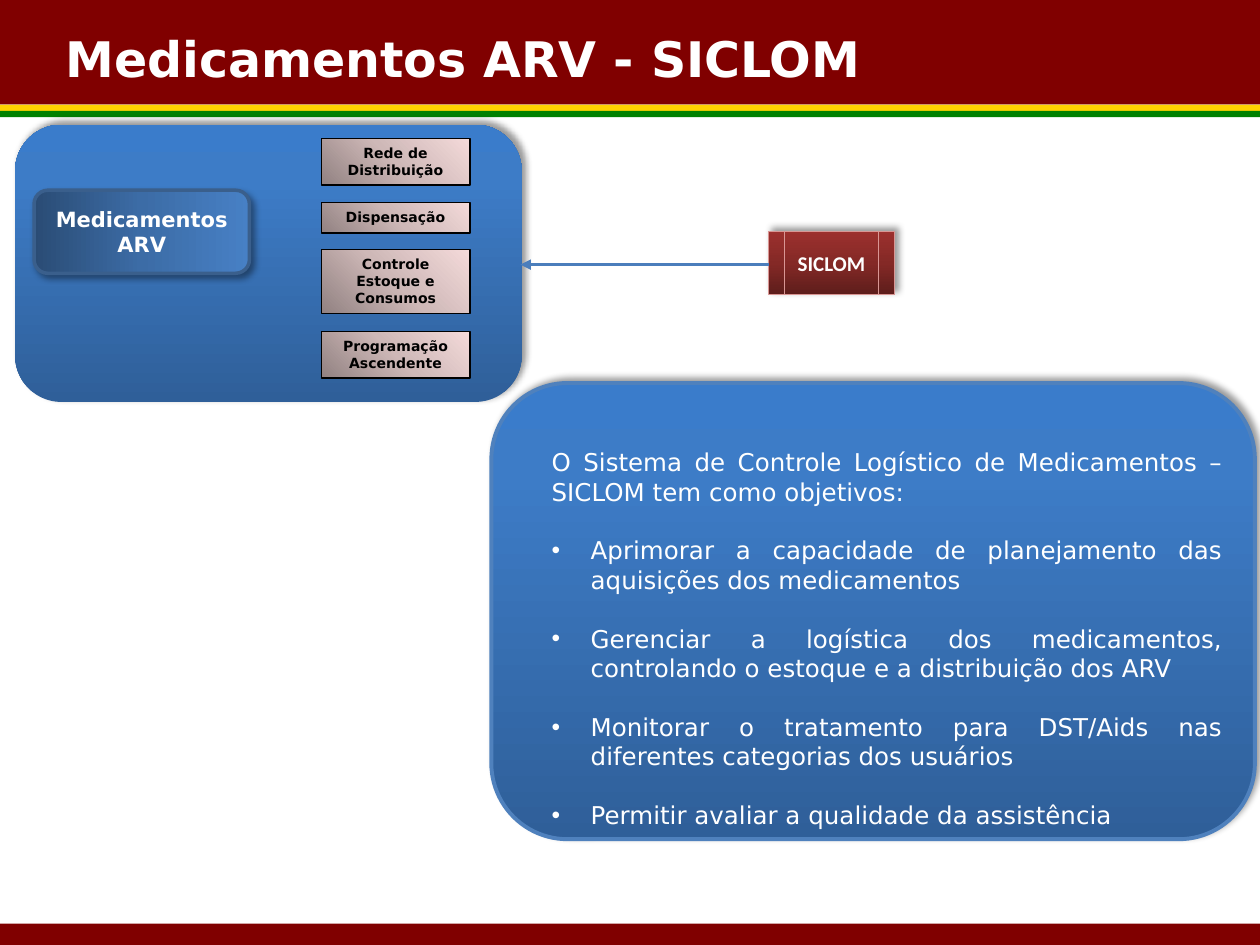
"""Build the slide on antiretroviral medicines and the SICLOM system."""
import pptx
import pptx.dml.color
import pptx.enum.shapes
import pptx.enum.text
import pptx.oxml
import pptx.oxml.ns
import pptx.util
from pptx.util import Inches

SHAPE = pptx.enum.shapes.MSO_SHAPE
ALIGN = pptx.enum.text.PP_ALIGN
ANCHOR = pptx.enum.text.MSO_ANCHOR
FIT = pptx.enum.text.MSO_AUTO_SIZE
qn = pptx.oxml.ns.qn

THEME = {
    "font": "DejaVu Sans", "process_font": "Calibri",
    "white": "FFFFFF", "black": "000000",
    "maroon": "800000", "yellow": "FFD200", "green": "008000",
    "panel_edge": "4F81BD", "topic_edge": "3A5F8C",
    "process_edge": "D99694", "arrow": "4B7EBC",
    "panel": (90, [(0, "2F5F99"), (80, "3D7CC7"), (100, "3A7CCB")]),
    "topic": (0, [(0, "2A4C75"), (50, "3C6CA6"), (100, "4780C5")]),
    "step": (45, [(0, "918181"), (50, "CEB8B7"), (100, "F4DADA")]),
    "process": (90, [(0, "5D1D1B"), (50, "842926"), (100, "9C302E")]),
    "title_size": 28, "body_size": 14, "label_size": 12, "step_size": 8,
    "body_gap": 16.8,
}

TITLE = "Medicamentos ARV - SICLOM"
TOPIC = "Medicamentos ARV"
SYSTEM = "SICLOM"
STEPS = [
    ("Rede de Distribuição", 1.10, 0.37),
    ("Dispensação", 1.61, 0.24),
    ("Controle Estoque e Consumos", 1.98, 0.51),
    ("Programação Ascendente", 2.63, 0.37),
]
INTRO = "O Sistema de Controle Logístico de Medicamentos – SICLOM tem como objetivos:"
GOALS = [
    "Aprimorar a capacidade de planejamento das aquisições dos medicamentos",
    "Gerenciar a logística dos medicamentos, controlando o estoque e a distribuição dos ARV",
    "Monitorar o tratamento para DST/Aids nas diferentes categorias dos usuários",
    "Permitir avaliar a qualidade da assistência",
]
BANDS = [("yellow", 0.83, 0.05), ("maroon", 0, 0.83),
         ("green", 0.88, 0.05), ("maroon", 7.33, 0.17)]


def rgb(name):
    return pptx.dml.color.RGBColor.from_string(THEME[name])


def apply_gradient(shape, name):
    angle, stops = THEME[name]
    shape.fill.gradient()
    shape.fill.gradient_angle = angle
    stop_list = shape._element.spPr.find(qn("a:gradFill")).find(qn("a:gsLst"))
    for old in list(stop_list):
        stop_list.remove(old)
    for position, color in stops:
        stop = pptx.oxml.ns.nsdecls("a")
        stop_list.append(pptx.oxml.parse_xml(
            f'<a:gs {stop} pos="{position * 1000}"><a:srgbClr val="{color}"/></a:gs>'))


def apply_shadow(shape, angle):
    effects = shape._element.spPr.find(qn("a:effectLst"))
    effects.append(pptx.oxml.parse_xml(
        f'<a:outerShdw {pptx.oxml.ns.nsdecls("a")} blurRad="50800" dist="38100" '
        f'dir="{angle * 60000}" rotWithShape="0"><a:srgbClr val="000000">'
        '<a:alpha val="40000"/></a:srgbClr></a:outerShdw>'))


def add_box(slide, kind, place, fill=None, gradient=None, edge=None, width=1, shadow=None):
    box = slide.shapes.add_shape(kind, *map(Inches, place))
    box.shadow.inherit = False
    if gradient:
        apply_gradient(box, gradient)
    else:
        box.fill.solid()
        box.fill.fore_color.rgb = rgb(fill)
    if edge:
        box.line.color.rgb = rgb(edge)
        box.line.width = pptx.util.Pt(width)
    else:
        box.line.fill.background()
    if shadow is not None:
        apply_shadow(box, shadow)
    return box


def write(frame, text, *, size, color="white", font="font", bold=True, align=ALIGN.CENTER,
          anchor=ANCHOR.MIDDLE, fit=FIT.NONE, bullet=False, gap=0, append=False):
    frame.word_wrap = True
    frame.auto_size = fit
    frame.vertical_anchor = anchor
    paragraph = frame.add_paragraph() if append else frame.paragraphs[0]
    paragraph.text = text
    paragraph.alignment = align
    if bullet:
        properties = paragraph._p.get_or_add_pPr()
        properties.set("marL", str(Inches(0.31)))
        properties.set("indent", str(-Inches(0.31)))
        namespace = pptx.oxml.ns.nsdecls("a")
        properties.append(pptx.oxml.parse_xml(f'<a:buFont {namespace} typeface="Arial"/>'))
        properties.append(pptx.oxml.parse_xml(f'<a:buChar {namespace} char="•"/>'))
    if gap:
        paragraph.space_before = pptx.util.Pt(gap)
    style = paragraph.runs[0].font
    style.name = THEME[font]
    style.size = pptx.util.Pt(THEME[size])
    style.bold = bold
    style.color.rgb = rgb(color)


def add_arrow(slide, start, end):
    arrow = slide.shapes.add_connector(
        pptx.enum.shapes.MSO_CONNECTOR.STRAIGHT, *map(Inches, start + end))
    arrow.line.color.rgb = rgb("arrow")
    arrow.line.width = pptx.util.Pt(1.5)
    properties = arrow._element.spPr
    namespace = pptx.oxml.ns.nsdecls("a")
    properties.find(qn("a:ln")).append(
        pptx.oxml.parse_xml(f'<a:tailEnd {namespace} type="triangle"/>'))
    properties.append(pptx.oxml.parse_xml(f"<a:effectLst {namespace}/>"))


def add_title(slide):
    title = slide.shapes.title
    title.left, title.top, title.width, title.height = map(Inches, (0.42, 0.18, 8.33, 0.57))
    write(title.text_frame, TITLE, size="title_size", align=ALIGN.LEFT, anchor=ANCHOR.TOP)
    slide.shapes._spTree.append(title._element)


def add_medicines(slide):
    add_box(slide, SHAPE.ROUNDED_RECTANGLE, (0.12, 0.99, 4.02, 2.2),
            gradient="panel", shadow=315)
    topic = add_box(slide, SHAPE.ROUNDED_RECTANGLE, (0.27, 1.51, 1.71, 0.66),
                    gradient="topic", edge="topic_edge", width=2, shadow=45)
    write(topic.text_frame, TOPIC, size="label_size")
    for label, top, height in STEPS:
        step = add_box(slide, SHAPE.RECTANGLE, (2.55, top, 1.18, height),
                       gradient="step", edge="black", width=0.75)
        write(step.text_frame, label, size="step_size", color="black",
              anchor=ANCHOR.TOP, fit=FIT.SHAPE_TO_FIT_TEXT)


def add_system(slide):
    system = add_box(slide, SHAPE.FLOWCHART_PREDEFINED_PROCESS, (6.1, 1.84, 1, 0.5),
                     gradient="process", edge="process_edge", width=0.75, shadow=315)
    write(system.text_frame, SYSTEM, size="label_size", font="process_font")
    add_arrow(slide, (6.1, 2.1), (4.13, 2.1))


def add_goals(slide):
    add_box(slide, SHAPE.ROUNDED_RECTANGLE, (3.9, 3.04, 6.06, 3.62),
            gradient="panel", edge="panel_edge", width=2.25, shadow=315)
    goals = slide.shapes.add_textbox(*map(Inches, (4.28, 3.5, 5.52, 3.16))).text_frame
    body = {"size": "body_size", "bold": False, "align": ALIGN.JUSTIFY,
            "anchor": ANCHOR.TOP, "fit": FIT.SHAPE_TO_FIT_TEXT}
    write(goals, INTRO, **body)
    for goal in GOALS:
        write(goals, goal, bullet=True, gap=THEME["body_gap"], append=True, **body)


def main():
    deck = pptx.Presentation()
    deck.slide_width, deck.slide_height = Inches(10), Inches(7.5)
    slide = deck.slides.add_slide(deck.slide_layouts[5])
    for color, top, height in BANDS:
        add_box(slide, SHAPE.RECTANGLE, (0, top, 10, height), fill=color)
    add_title(slide)
    add_medicines(slide)
    add_system(slide)
    add_goals(slide)
    deck.save("out.pptx")


if __name__ == "__main__":
    main()
